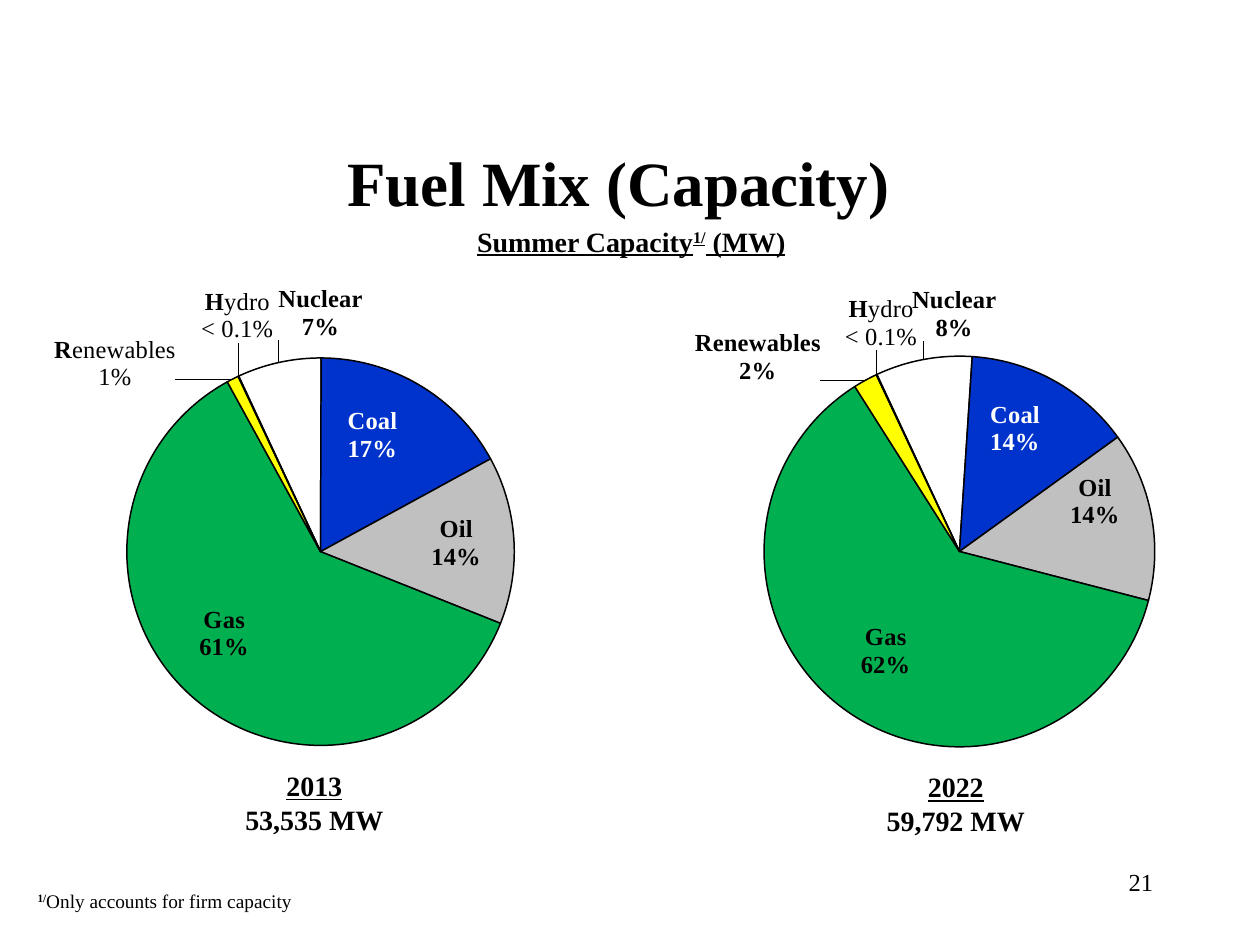
from math import cos, radians, sin
from lxml import etree
from pptx import Presentation
from pptx.chart.data import CategoryChartData
from pptx.dml.color import RGBColor
from pptx.enum.chart import XL_CHART_TYPE, XL_LABEL_POSITION
from pptx.enum.text import MSO_ANCHOR, PP_ALIGN
from pptx.oxml.ns import qn
from pptx.util import Inches, Pt

PIE, OUT = XL_CHART_TYPE.PIE, XL_LABEL_POSITION.OUTSIDE_END
LEFT, MID, RIGHT = PP_ALIGN.LEFT, PP_ALIGN.CENTER, PP_ALIGN.RIGHT
FUELS = ["Nuclear", "Coal", "Oil", "Gas", "Renewables", "Hydro"]
WIDTHS = [6.8, 4, 3.9, 3.9, 9.8, 5.7]
TALL, GAP, START = 4.4, 0.6, 335
TRACE = 0.0005
HYDRO = [[("H", True), ("ydro", False)], [("< 0.1%", False)]]
RENEW = [[("R", True), ("enewables", False)], [("1%", False)]]


def color(code):
    """Turn a hex string into a colour."""
    return RGBColor.from_string(code)


def style(font, size=14, bold=True, line=False, ink="000000", face="Times New Roman"):
    """Format a font."""
    font.name, font.size, font.bold = face, Pt(size), bold
    font.underline = line
    font.color.rgb = color(ink)


def write(para, text, raised=False, align=MID, **form):
    """Add a formatted run to a paragraph."""
    para.alignment = align
    run = para.add_run()
    run.text = text
    style(run.font, **form)
    if raised:
        run.font._element.set("baseline", "30000")


def node(tag, **attrs):
    """Make a chart element."""
    item = etree.Element(qn("c:" + tag))
    for key, value in attrs.items():
        item.set(key, str(value))
    return item


def layout(**parts):
    """Make a manual chart layout."""
    outer, inner = node("layout"), node("manualLayout")
    outer.append(inner)
    for tag, value in parts.items():
        inner.append(node(tag, val=value))
    return outer


def side(value):
    """Give the side on which an outer label lies."""
    return 0 if abs(value) < 0.09 else (1 if value > 0 else -1)


class Deck:
    """Hold the style and the current slide, measured on a 100 by 75 grid."""

    def __init__(self):
        """Open a deck with one title-only slide."""
        self.prs = Presentation()
        self.prs.slide_width, self.prs.slide_height = Inches(10), Inches(7.5)
        self.col = self.prs.slide_width / 100
        self.row = self.prs.slide_height / 75
        self.slide = self.prs.slides.add_slide(self.prs.slide_layouts[5])

    def box(self, x, y, w, h):
        """Turn grid units into lengths."""
        return [int(n * unit) for n, unit in zip((x, y, w, h), (self.col, self.row) * 2)]

    def title(self, text, *spot):
        """Place and fill the title."""
        shape = self.slide.shapes.title
        shape.left, shape.top, shape.width, shape.height = self.box(*spot)
        shape.text_frame.vertical_anchor = MSO_ANCHOR.MIDDLE
        write(shape.text_frame.paragraphs[0], text, size=36)

    def text(self, lines, *spot, **form):
        """Add a text box from lines of (text, format) runs."""
        frame = self.slide.shapes.add_textbox(*self.box(*spot)).text_frame
        frame.word_wrap = True
        for i, runs in enumerate(lines):
            para = frame.add_paragraph() if i else frame.paragraphs[0]
            for words, extra in runs:
                write(para, words, **{**form, **extra})

    def pie(self, spot, plot, vals, fills, spots, custom):
        """Add a pie chart with labels centred on the given grid spots."""
        data = CategoryChartData(number_format="0%")
        data.categories = FUELS
        data.add_series("Series 1", vals)
        chart = self.slide.shapes.add_chart(PIE, *self.box(*spot), data).chart
        chart.has_legend = chart.has_title = False
        style(chart.font, size=6.5, bold=False, face="Arial")
        pie = chart.plots[0]
        pie.vary_by_categories = True
        root = chart._chartSpace
        area = root.find(".//" + qn("c:plotArea"))
        for old in area.findall(qn("c:layout")):
            area.remove(old)
        px, py, pw, ph = plot
        area.insert(0, layout(layoutTarget="inner", xMode="edge", yMode="edge",
                              x=px, y=py, w=pw, h=ph))
        root.find(".//" + qn("c:pieChart")).append(node("firstSliceAng", val=START))

        left, top, wide, high = spot
        midx, midy = left + wide * (px + pw / 2), top + high * (py + ph / 2)
        reach = min(wide * pw, high * ph) / 2 + GAP
        turn = START
        for i, (val, fill) in enumerate(zip(vals, fills)):
            angle = radians(turn + val * 180)
            turn += val * 360
            point = pie.series[0].points[i]
            point.format.fill.solid()
            point.format.fill.fore_color.rgb = color(fill)
            point.format.line.color.rgb = color("000000")
            point.format.line.width = Pt(0.84)
            dx, dy = sin(angle), -cos(angle)
            x = midx + reach * dx + side(dx) * WIDTHS[i] / 2
            y = midy + reach * dy + side(dy) * TALL / 2
            shift = layout(x=round((spots[i][0] - x) / wide, 4),
                           y=round((spots[i][1] - y) / high, 4))
            self.label(root, point, i, shift, custom.get(i))

    def label(self, root, point, i, shift, lines):
        """Format and move one slice label."""
        label = point.data_label
        if lines:
            frame = label.text_frame
            for k, runs in enumerate(lines):
                para = frame.add_paragraph() if k else frame.paragraphs[0]
                for words, bold in runs:
                    write(para, words, bold=bold)
        else:
            style(label.font, ink="FFFFFF" if FUELS[i] == "Coal" else "000000")
        label.position = OUT
        item = next(d for d in root.iter(qn("c:dLbl"))
                    if d.find(qn("c:idx")).get("val") == str(i))
        item.insert(1, shift)
        if not lines:
            item.insert(2, node("numFmt", formatCode="0%", sourceLinked=0))
        item.find(qn("c:showVal")).set("val", "1")
        item.find(qn("c:showCatName")).set("val", "1")
        item.find(qn("c:showPercent")).set("val", "0")
        gap = node("separator")
        gap.text = "\n"
        item.append(gap)


def main():
    """Build the slide."""
    deck = Deck()
    deck.title("Fuel Mix (Capacity)", 7.5, 11.9, 83.2, 4.9)
    years = [("2013", "53,535 MW", (16.3, 60.5, 17.3, 6.4)),
             ("2022", "59,792 MW", (66.4, 60.6, 18.9, 6.4))]
    for year, total, spot in years:
        deck.text([[(year, {"line": True})], [(total, {})]], *spot, size=16)
    deck.text([[("Summer Capacity", {}), ("1/", {"raised": True}), (" (MW)", {})]],
              28.7, 17.3, 42.8, 3.7, size=16, line=True)
    fills = ["FFFFFF", "0033CC", "C0C0C0", "00B050", "FFFF00"]
    deck.pie((-6, 21.2, 61, 44), (0.199, 0.164, 0.633, 0.699),
             (0.07, 0.17, 0.14, 0.61, 0.01, TRACE), fills + ["FF8080"],
             [(25.4, 24.8), (29.6, 34.5), (36.2, 43.1), (17.8, 50.3), (9.1, 28.8), (18.9, 25)],
             {4: RENEW, 5: HYDRO})
    deck.pie((45.5, 21.4, 61.8, 43.8), (0.176, 0.157, 0.64, 0.708),
             (0.08, 0.14, 0.14, 0.62, 0.02, TRACE), fills + ["FF0000"],
             [(75.7, 24.9), (80.6, 34), (86.9, 39.8), (70.3, 51.7), (60.3, 28.3), (70, 25.6)],
             {5: HYDRO})
    deck.text([[("21", {})]], 71.7, 68.3, 20.8, 5, bold=False, align=RIGHT)
    deck.text([[("1/", {"raised": True, "bold": True}),
                ("Only accounts for firm capacity", {})]],
              2, 70.1, 32.3, 3, size=11, bold=False, align=LEFT)
    deck.prs.save("out.pptx")


if __name__ == "__main__":
    main()
